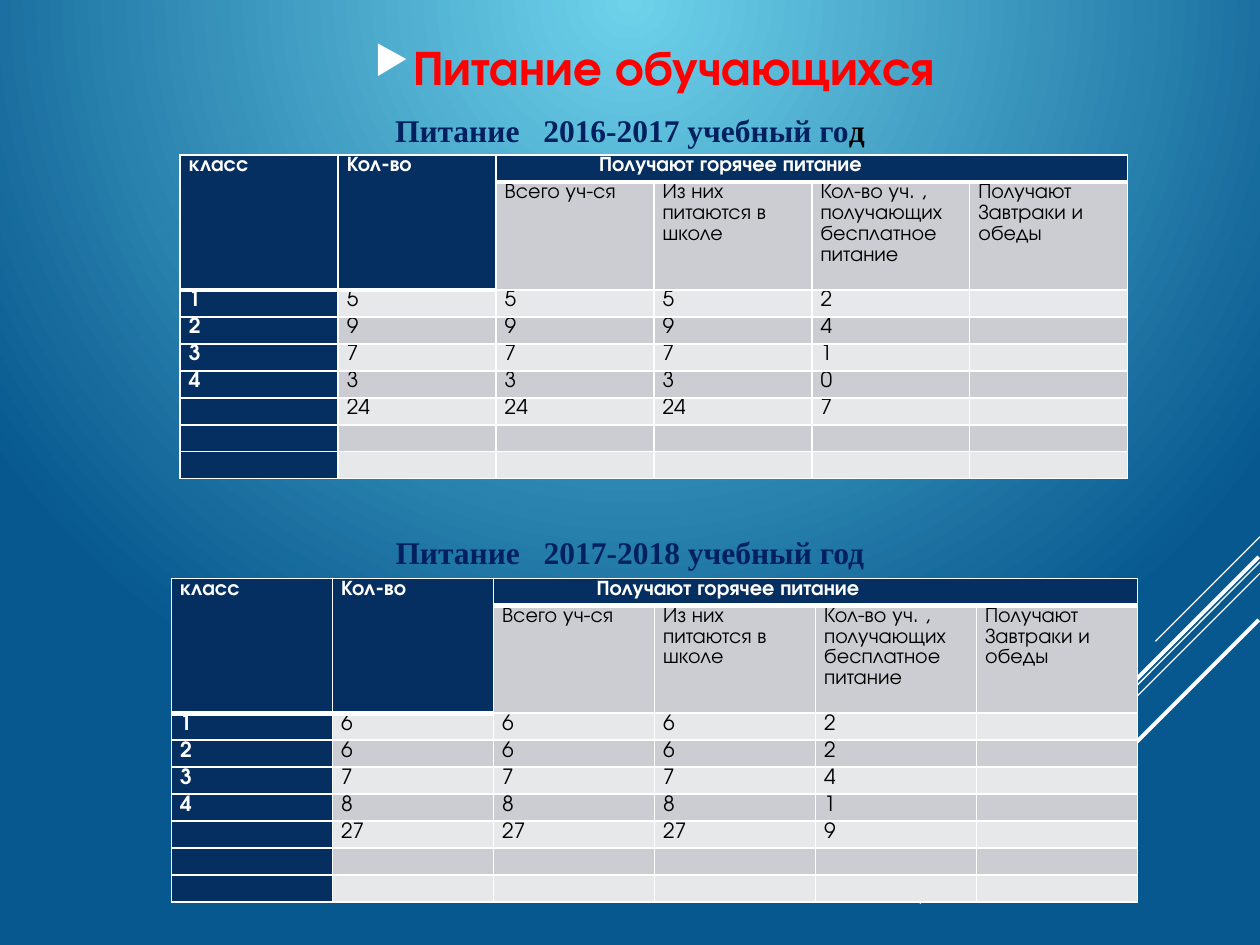
import pptx
import pptx.util
from pptx.dml.color import RGBColor
from pptx.enum.shapes import MSO_CONNECTOR
from pptx.enum.text import MSO_ANCHOR, MSO_AUTO_SIZE, PP_ALIGN
from pptx.oxml.ns import qn
from pptx.oxml.xmlchemy import OxmlElement
from pptx.util import Inches, Pt

WHITE = RGBColor(0xFF, 0xFF, 0xFF)
BLACK = RGBColor(0, 0, 0)
RED = RGBColor(0xFF, 0, 0)
NAVY = RGBColor(0x05, 0x2F, 0x61)
CAPTION_BLUE = RGBColor(0x00, 0x20, 0x60)
DARK_BAND = RGBColor(0xCC, 0xCD, 0xD2)
LIGHT_BAND = RGBColor(0xE7, 0xE8, 0xEA)
SKY = RGBColor(0x6E, 0xD2, 0xEB)
SEA = RGBColor(0x06, 0x58, 0x8E)

SANS = "TeX Gyre Adventor"
SERIF = "Times New Roman"

RAYS = [  # start, end, width in points
    ((10, 4.26), (9.17, 5.09), 0.75),
    ((10, 4.46), (7.3, 7.17), 0.75),
    ((10, 4.55), (8.28, 6.27), 0.75),
    ((9.99, 4.42), (8.42, 5.99), 2.25),
    ((9.99, 4.92), (8.85, 6.06), 2.25),
]

HEADER = [
    ["класс", "Кол-во", "Получают горячее питание", "", "", ""],
    ["", "", "Всего уч-ся", "Из них питаются в школе",
     "Кол-во уч. , получающих бесплатное питание", "Получают\nЗавтраки и обеды"],
]
BODY_ROWS = 7
TALL_ROW = 4  # height of the second header row, in ordinary rows

# class, pupils (all of whom eat at school), free meals
MEALS_2016 = [("1", 5, 2), ("2", 9, 4), ("3", 7, 1), ("4", 3, 0), ("", 24, 7)]
MEALS_2017 = [("1", 6, 2), ("2", 6, 2), ("3", 7, 4), ("4", 8, 1), ("", 27, 9)]


def child(parent, tag, **attributes):
    element = OxmlElement(tag)
    for name, value in attributes.items():
        element.set(name, str(value))
    parent.append(element)
    return element


def add_run(paragraph, text, size, face, color, bold):
    run = paragraph.add_run()
    run.text = text
    run.font.color.rgb = color
    for name, value in {"size": Pt(size), "name": face, "bold": bold}.items():
        setattr(run.font, name, value)
    return run


def paint_background(slide):
    """Light at the middle of the top edge, darker outwards."""
    fill = slide.background.fill
    fill.gradient()
    for stop, color in zip(fill.gradient_stops, (SKY, SEA)):
        stop.color.rgb = color
    gradient = slide.element.find(".//" + qn("a:gradFill"))
    gradient.remove(gradient.find(qn("a:lin")))
    glow = child(gradient, "a:path", path="circle")
    child(glow, "a:fillToRect", l=0, t=0, r=0, b=100000)


def draw_rays(slide):
    for start, end, width in RAYS:
        ray = slide.shapes.add_connector(
            MSO_CONNECTOR.STRAIGHT, *(Inches(v) for v in start + end))
        ray.line.color.rgb = WHITE
        ray.line.width = Pt(width)
        child(ray.element.spPr, "a:effectLst")


def add_heading(slide, box):
    frame = slide.shapes.add_textbox(*box).text_frame
    settings = {"word_wrap": True, "vertical_anchor": MSO_ANCHOR.MIDDLE,
                "margin_top": Inches(0.14), "margin_bottom": Inches(0.05)}
    for name, value in settings.items():
        setattr(frame, name, value)
    paragraph = frame.paragraphs[0]
    paragraph.alignment = PP_ALIGN.CENTER
    add_run(paragraph, "Питание обучающихся", 28, SANS, RED, True)
    properties = paragraph._p.get_or_add_pPr()
    properties.set("marL", str(Inches(0.31)))
    properties.set("indent", str(-Inches(0.31)))
    bullet_color = child(properties, "a:buClr")
    child(bullet_color, "a:srgbClr", val=WHITE)
    child(properties, "a:buSzPct", val=80000)
    child(properties, "a:buChar", char="▶")


def add_caption(slide, box, year_text, last_letter_color):
    frame = slide.shapes.add_textbox(*box).text_frame
    frame.word_wrap = False
    frame.auto_size = MSO_AUTO_SIZE.SHAPE_TO_FIT_TEXT
    paragraph = frame.paragraphs[0]
    paragraph.alignment = PP_ALIGN.CENTER
    paragraph.line_spacing = 1.07
    pieces = [("Питание", CAPTION_BLUE), (" ", CAPTION_BLUE),
              (year_text[:-1], CAPTION_BLUE), (year_text[-1], last_letter_color)]
    runs = [add_run(paragraph, text, 18, SERIF, color, True) for text, color in pieces]
    runs[1]._r.get_or_add_rPr().set("spc", "900")  # widens the gap before the year


def set_borders(cell, heavy_top, heavy_bottom):
    properties = cell._tc.get_or_add_tcPr()
    widths = {"a:lnL": 1, "a:lnR": 1,
              "a:lnT": 3 if heavy_top else 1, "a:lnB": 3 if heavy_bottom else 1}
    for tag, width in widths.items():
        border = child(properties, tag, w=Pt(width))
        child(child(border, "a:solidFill"), "a:srgbClr", val=WHITE)


def fill_cell(cell, text, background, color, bold, indent):
    margins = {"margin_left": Inches(0.07), "margin_right": Inches(0.07),
               "margin_top": 0, "margin_bottom": 0}
    for name, value in margins.items():
        setattr(cell, name, value)
    cell.fill.solid()
    cell.fill.fore_color.rgb = background
    for number, line in enumerate(text.split("\n")):
        frame = cell.text_frame
        paragraph = frame.add_paragraph() if number else frame.paragraphs[0]
        paragraph.line_spacing = 1.07
        if line:
            add_run(paragraph, line, 12, SANS, color, bold)
        else:
            child(paragraph._p, "a:endParaRPr", sz=1200)
        if indent:
            paragraph._p.get_or_add_pPr().set("marL", str(indent))


def add_meals_table(slide, box, meals):
    body = [[grade] + [str(pupils)] * 3 + [str(free), ""] for grade, pupils, free in meals]
    body += [[""] * 6] * (BODY_ROWS - len(body))
    rows = HEADER + body
    table = slide.shapes.add_table(len(rows), 6, *box).table
    left, top, width, height = box
    for column in table.columns:
        column.width = int(width / 6)
    unit = int(height / (len(rows) - 1 + TALL_ROW))
    for r, texts in enumerate(rows):
        table.rows[r].height = unit * (TALL_ROW if r == 1 else 1)
        for c, text in enumerate(texts):
            first_below = 2 if c < 2 else 1  # first row under this column's header
            dark = r < first_below or c == 0
            band = NAVY if dark else DARK_BAND if r % 2 else LIGHT_BAND
            cell = table.cell(r, c)
            set_borders(cell, r == first_below, r < first_below)
            fill_cell(cell, text, band, WHITE if dark else BLACK, dark,
                      Inches(0.75) if (r, c) == (0, 2) else 0)
    for c in (0, 1):
        table.cell(0, c).merge(table.cell(1, c))
    table.cell(0, 2).merge(table.cell(0, 5))


def inches_box(*lengths):
    return tuple(Inches(length) for length in lengths)


def main():
    deck = pptx.Presentation()
    deck.slide_width, deck.slide_height = Inches(10), Inches(7.5)
    slide = deck.slides.add_slide(deck.slide_layouts[6])
    paint_background(slide)
    draw_rays(slide)
    add_heading(slide, inches_box(1.03, 0.14, 8.33, 0.67))
    add_caption(slide, inches_box(3.02, 0.81, 3.96, 0.43), "2016-2017 учебный год", BLACK)
    add_meals_table(slide, inches_box(1.43, 1.23, 7.52, 2.57), MEALS_2016)
    add_caption(slide, inches_box(3.02, 4.16, 3.96, 0.43), "2017-2018 учебный год",
                CAPTION_BLUE)
    add_meals_table(slide, inches_box(1.36, 4.59, 7.67, 2.57), MEALS_2017)
    deck.save("out.pptx")


if __name__ == "__main__":
    main()
